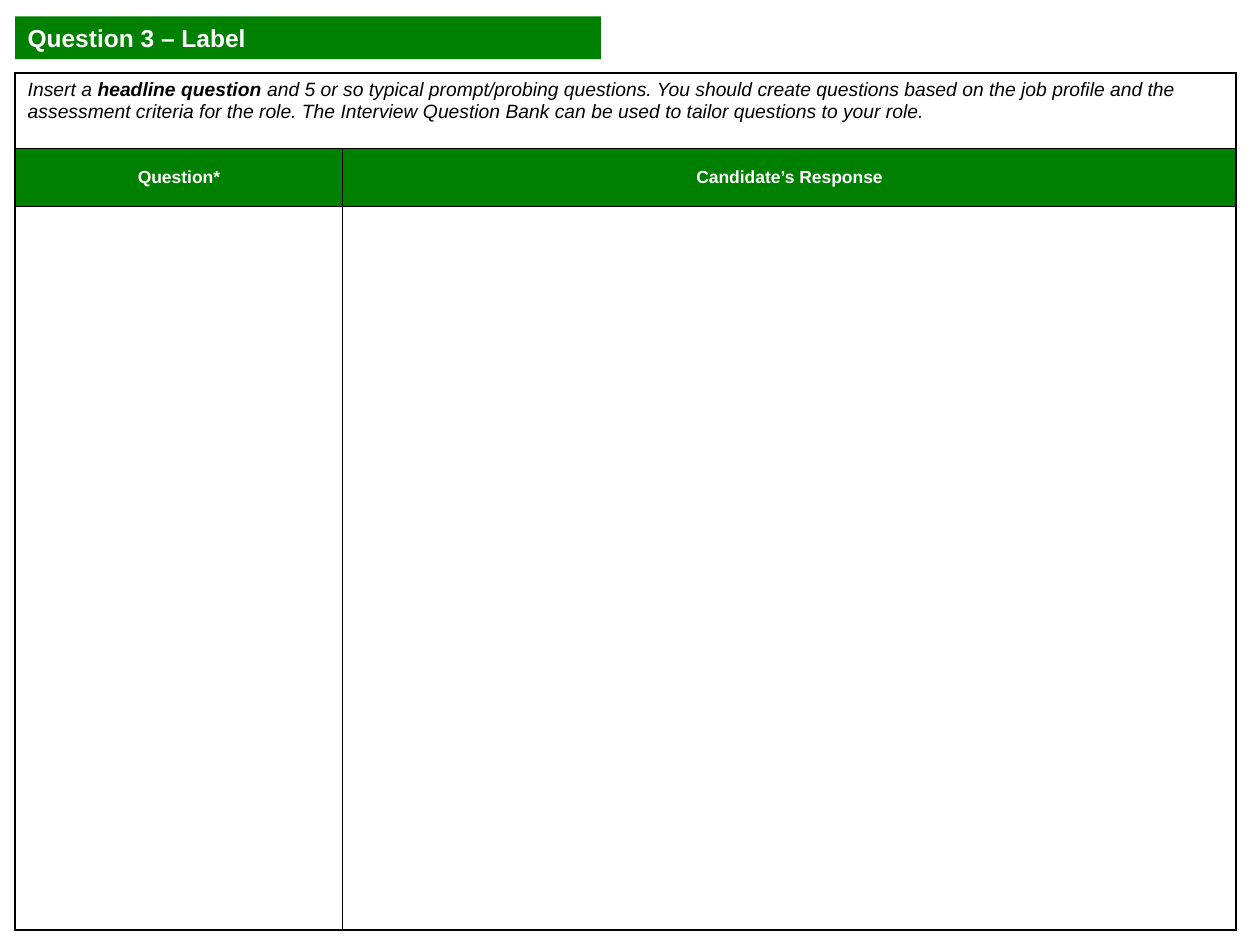
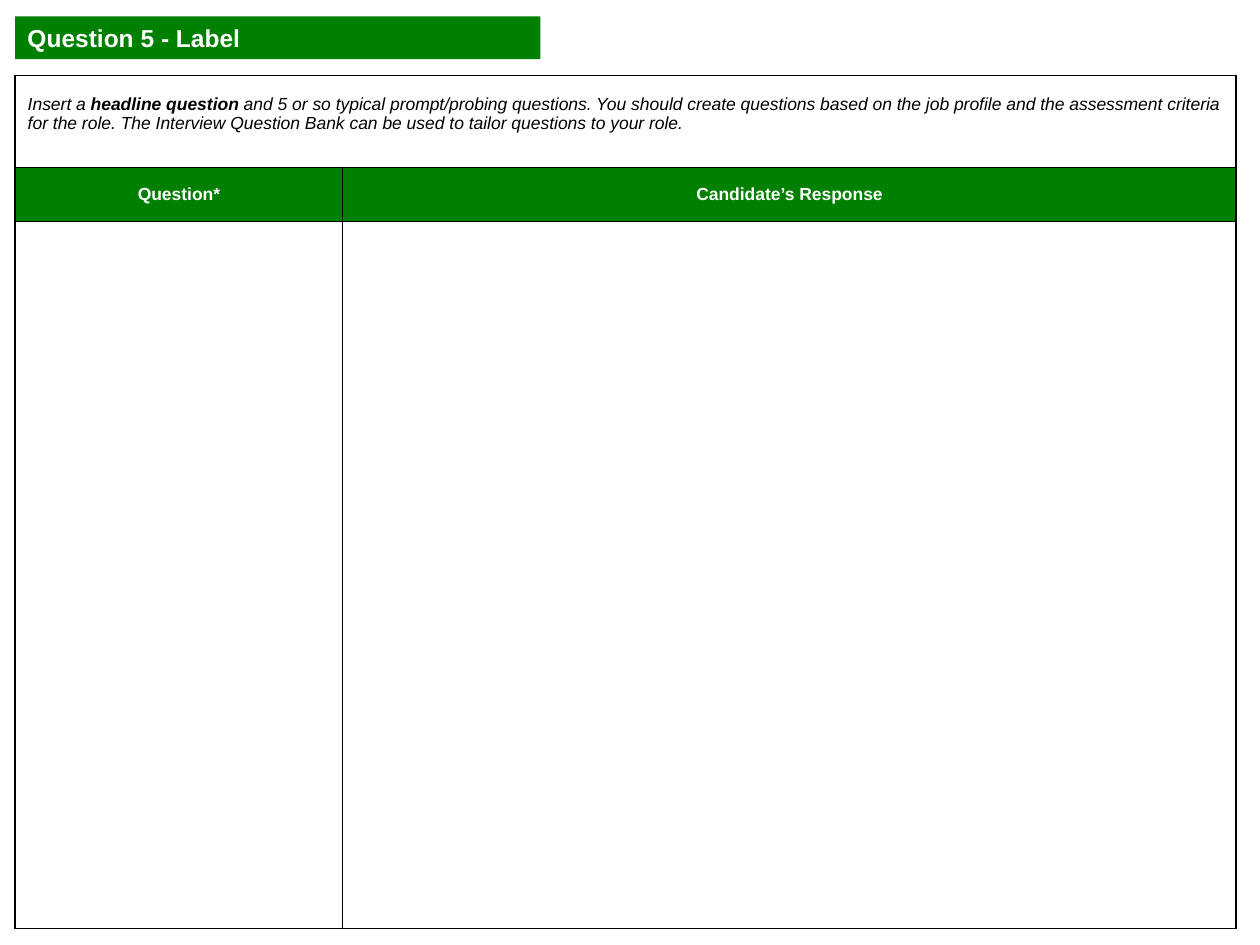
"""Build two interview question sheets, each with a title band and a response table."""
from dataclasses import dataclass

from lxml import etree
from pptx import Presentation
from pptx import util as u
from pptx.dml.color import RGBColor
from pptx.enum import shapes, text
from pptx.oxml.ns import qn


@dataclass(frozen=True)
class Theme:
    """Colours, type sizes and layout shares used by both sheets."""
    font: str = "Arial"
    green: RGBColor = RGBColor(0, 128, 0)
    white: RGBColor = RGBColor(255, 255, 255)
    black: RGBColor = RGBColor(0, 0, 0)
    title_size: float = 14
    header_size: float = 10
    border: float = 1
    width: float = 10
    height: float = 7.5
    left: float = 0.012
    columns: tuple = (0.26, 0.709)
    band_top: float = 0.13 / 7.5
    band_height: float = 0.34 / 7.5


@dataclass(frozen=True)
class Sheet:
    """The wording and measures that differ between question sheets."""
    title: str
    band_width: float
    table_top: float
    rows: tuple
    guidance_size: float
    guidance_inset: float


THEME = Theme()
HEADERS = ("Question*", "Candidate’s Response")
GUIDANCE = (
    ("Insert a ", False),
    ("headline question", True),
    (" and 5 or so typical prompt/probing questions. You should create questions "
     "based on the job profile and the assessment criteria for the role. The "
     "Interview Question Bank can be used to tailor questions to your role.", False),
)
SHEETS = (
    Sheet("Question 3 – Label", 0.465, 0.58 / 7.5,
          (0.6 / 7.5, 0.46 / 7.5, 5.74 / 7.5), 11, 0.05),
    Sheet("Question 5 - Label", 0.417, 0.08,
          (0.73 / 7.5, 0.43 / 7.5, 5.61 / 7.5), 10, 0.15),
)


def across(share):
    """Return a share of the slide's width as a length."""
    return u.Inches(THEME.width * share)


def down(share):
    """Return a share of the slide's height as a length."""
    return u.Inches(THEME.height * share)


def add_span(para, words, size, colour, bold=False, italic=False):
    """Add one formatted run to a paragraph."""
    span = para.add_run()
    span.text = words
    font = span.font
    font.name, font.size = THEME.font, u.Pt(size)
    font.bold, font.italic = bold, italic
    font.color.rgb = colour


def add_title_band(page, sheet):
    """Add the green band that carries the question's title."""
    box = page.shapes.add_shape(
        shapes.MSO_SHAPE.RECTANGLE, across(THEME.left), down(THEME.band_top),
        across(sheet.band_width), down(THEME.band_height))
    box.shadow.inherit = False
    box.fill.solid()
    box.fill.fore_color.rgb = THEME.green
    box.line.fill.background()
    frame = box.text_frame
    frame.word_wrap = True
    frame.vertical_anchor = text.MSO_ANCHOR.TOP
    para = frame.paragraphs[0]
    para.alignment = text.PP_ALIGN.LEFT
    add_span(para, sheet.title, THEME.title_size, THEME.white, bold=True)


def add_borders(cell):
    """Draw a black line on each side of a cell."""
    properties = cell._tc.get_or_add_tcPr()
    for position, side in enumerate(("lnL", "lnR", "lnT", "lnB")):
        line = etree.Element(qn(f"a:{side}"), w=str(u.Pt(THEME.border)))
        fill = etree.SubElement(line, qn("a:solidFill"))
        etree.SubElement(fill, qn("a:srgbClr"), val=str(THEME.black))
        properties.insert(position, line)


def style_cell(cell, colour):
    """Give a cell its fill and borders."""
    cell.fill.solid()
    cell.fill.fore_color.rgb = colour
    add_borders(cell)


def write_guidance(cell, sheet):
    """Write the interviewer's guidance in the merged top row."""
    cell.vertical_anchor = text.MSO_ANCHOR.TOP
    cell.margin_top = u.Inches(sheet.guidance_inset)
    para = cell.text_frame.paragraphs[0]
    for words, bold in GUIDANCE:
        add_span(para, words, sheet.guidance_size, THEME.black, bold, italic=True)


def write_header(cell, words):
    """Write a centred white column heading."""
    cell.vertical_anchor = text.MSO_ANCHOR.MIDDLE
    para = cell.text_frame.paragraphs[0]
    para.alignment = text.PP_ALIGN.CENTER
    add_span(para, words, THEME.header_size, THEME.white, bold=True)


def add_response_table(page, sheet):
    """Add the table with guidance, column headings and answer space."""
    table = page.shapes.add_table(
        len(sheet.rows), len(THEME.columns), across(THEME.left),
        down(sheet.table_top), across(sum(THEME.columns)),
        down(sum(sheet.rows))).table
    table.first_row = table.horz_banding = False
    for column, share in zip(table.columns, THEME.columns):
        column.width = across(share)
    for row, share, colour in zip(
            table.rows, sheet.rows, (THEME.white, THEME.green, THEME.white)):
        row.height = down(share)
        for cell in row.cells:
            style_cell(cell, colour)
    table.cell(0, 0).merge(table.cell(0, len(THEME.columns) - 1))
    write_guidance(table.cell(0, 0), sheet)
    for index, words in enumerate(HEADERS):
        write_header(table.cell(1, index), words)


def main():
    """Build and save the deck."""
    deck = Presentation()
    deck.slide_width, deck.slide_height = across(1), down(1)
    for sheet in SHEETS:
        page = deck.slides.add_slide(deck.slide_layouts[6])
        add_title_band(page, sheet)
        add_response_table(page, sheet)
    deck.save("out.pptx")


if __name__ == "__main__":
    main()
